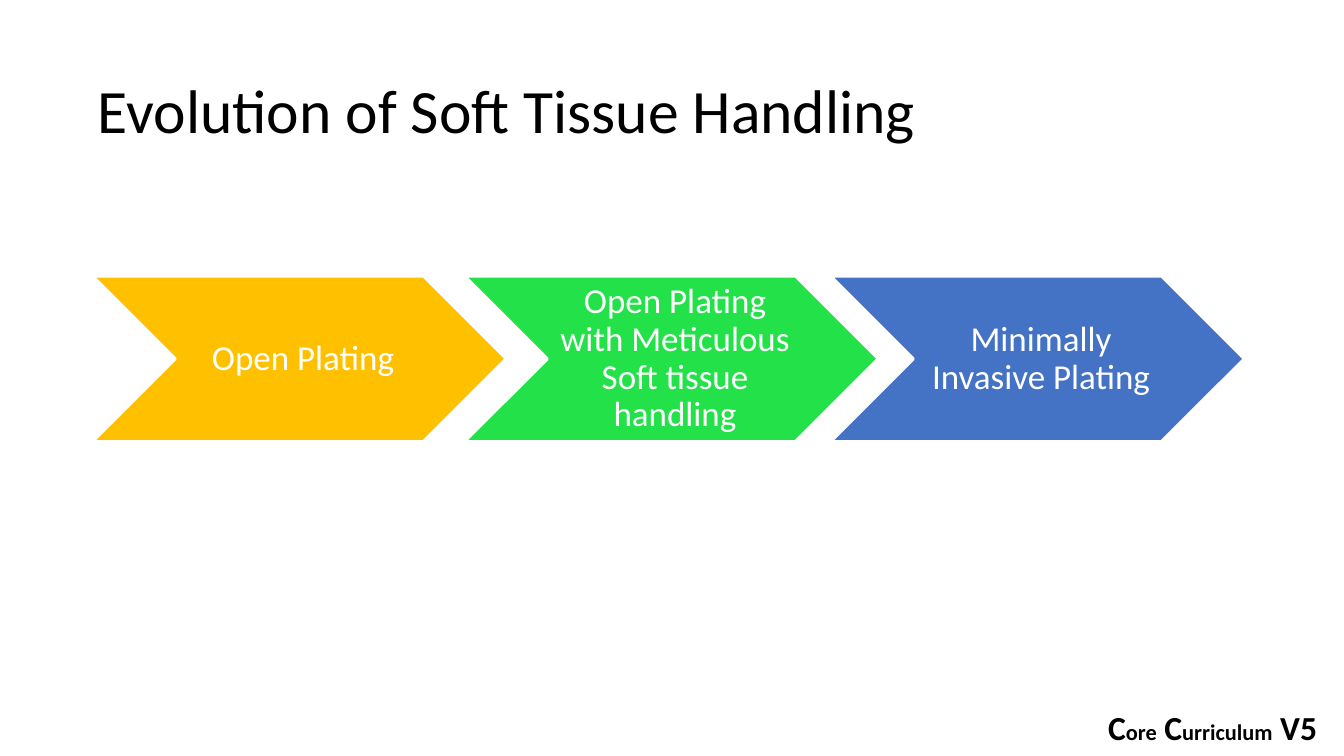
from dataclasses import dataclass

from pptx import Presentation
from pptx.dml.color import RGBColor
from pptx.enum.shapes import MSO_SHAPE
from pptx.enum.text import MSO_ANCHOR, PP_ALIGN
from pptx.util import Inches, Pt


@dataclass(frozen=True)
class Theme:
    font: str = "Calibri"
    ink: str = "000000"
    paper: str = "FFFFFF"
    amber: str = "FFC000"
    green: str = "23E148"
    blue: str = "4472C4"
    title_size: int = 44
    stage_size: int = 25
    footer_large: int = 24
    footer_small: int = 16
    outline: int = 2


THEME = Theme()


def write_text(frame, *runs, color=THEME.ink, bold=False, align=PP_ALIGN.LEFT,
               anchor=MSO_ANCHOR.TOP, spacing=1.0, insets=(0.05, 0.05, 0.05, 0.05)):
    frame.word_wrap = True
    frame.vertical_anchor = anchor
    frame.margin_left, frame.margin_top, frame.margin_right, frame.margin_bottom = map(Inches, insets)
    paragraph = frame.paragraphs[0]
    paragraph.alignment = align
    paragraph.line_spacing = spacing
    for text, size in runs:
        run = paragraph.add_run()
        run.text = text
        run.font.name = THEME.font
        run.font.size = Pt(size)
        run.font.bold = bold
        run.font.color.rgb = RGBColor.from_string(color)


def add_title(slide, left, top, width, height):
    title = slide.shapes.add_textbox(*map(Inches, (left, top, width, height)))
    write_text(title.text_frame, ("Evolution of Soft Tissue Handling", THEME.title_size),
               anchor=MSO_ANCHOR.MIDDLE, spacing=0.9)


def add_stages(slide, left, top, width, height):
    stages = [
        (0, "Open Plating", THEME.amber),
        (3.69, "Open Plating with Meticulous Soft tissue handling", THEME.green),
        (7.32, "Minimally Invasive Plating", THEME.blue),
    ]
    stage_width = width - stages[-1][0]
    for offset, label, color in stages:
        stage = slide.shapes.add_shape(
            MSO_SHAPE.CHEVRON, *map(Inches, (left + offset, top, stage_width, height)))
        stage.shadow.inherit = False
        stage.fill.solid()
        stage.fill.fore_color.rgb = RGBColor.from_string(color)
        stage.line.color.rgb = RGBColor.from_string(THEME.paper)
        stage.line.width = Pt(THEME.outline)
        write_text(stage.text_frame, (label, THEME.stage_size), color=THEME.paper,
                   align=PP_ALIGN.CENTER, anchor=MSO_ANCHOR.MIDDLE, spacing=0.9,
                   insets=(0.11, 0.04, 0.04, 0.04))


def add_footer(slide, left, top, width, height):
    footer = slide.shapes.add_textbox(*map(Inches, (left, top, width, height)))
    large, small = THEME.footer_large, THEME.footer_small
    write_text(footer.text_frame, ("C", large), ("ore", small), (" C", large),
               ("urriculum", small), (" V5", large), bold=True)


def main():
    deck = Presentation()
    deck.slide_width, deck.slide_height = Inches(13.33), Inches(7.5)
    slide = deck.slides.add_slide(deck.slide_layouts[6])
    add_footer(slide, 10.94, 6.96, 2.25, 0.43)
    add_title(slide, 0.92, 0.4, 11.5, 1.45)
    add_stages(slide, 0.92, 2.74, 11.42, 1.64)
    deck.save("out.pptx")


if __name__ == "__main__":
    main()
